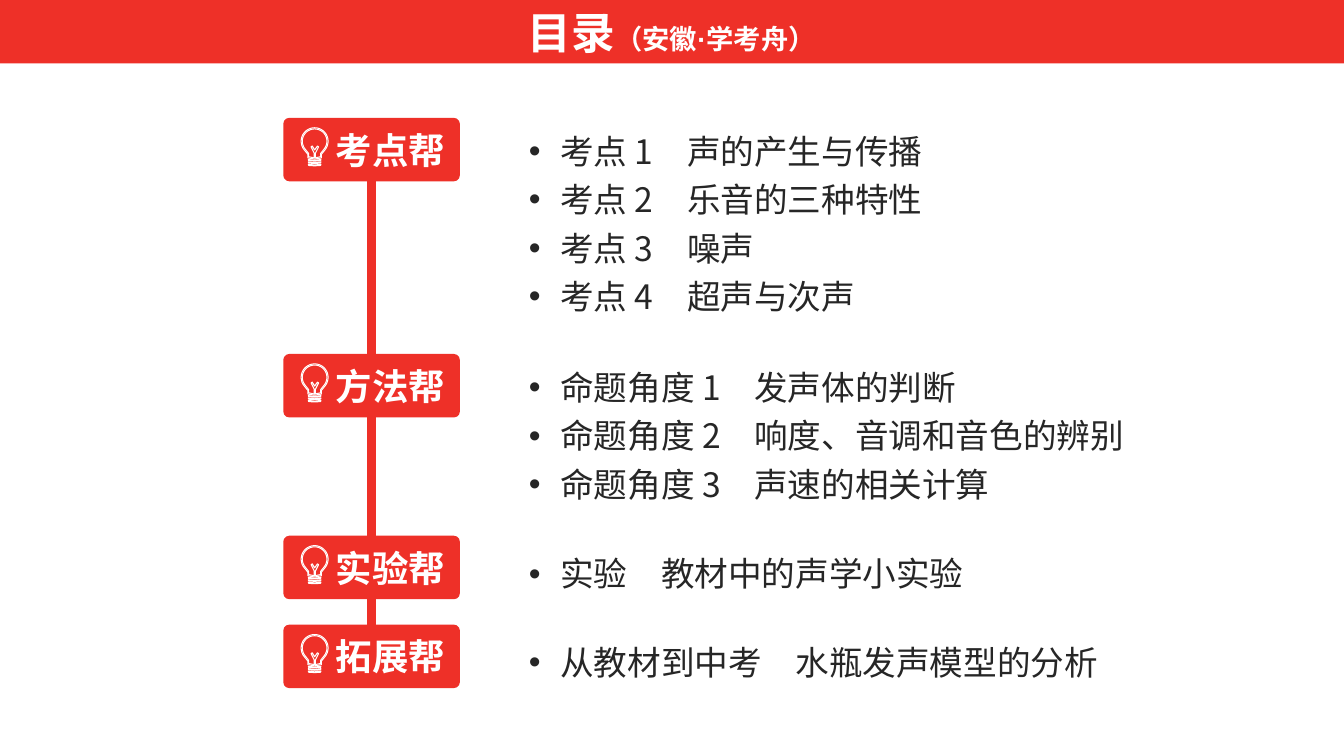
"""Build the contents slide on sound: four tags on a spine, each with its list."""
from math import cos, radians, sin

from lxml import etree
from pptx import Presentation, util as u
from pptx.dml.color import RGBColor
from pptx.enum import shapes, text
from pptx.oxml.ns import qn

RED, WHITE, INK = "EE3028", "FFFFFF", "262626"
HEAD, BODY = "Arial", "Noto Sans CJK SC"
TAG_X, TAG_W, TAG_H = 7.14, 4.45, 1.6
LIST_X, LIST_W, ROW, STEP = 13.08, 18.14, 1.37, 1.23
PARTS = [
    ("考点帮", 2.97, ["考点 1　声的产生与传播", "考点 2　乐音的三种特性",
                   "考点 3　噪声", "考点 4　超声与次声"]),
    ("方法帮", 8.92, ["命题角度 1　发声体的判断", "命题角度 2　响度、音调和音色的辨别",
                   "命题角度 3　声速的相关计算"]),
    ("实验帮", 13.5, ["实验　教材中的声学小实验"]),
    ("拓展帮", 15.74, ["从教材到中考　水瓶发声模型的分析"]),
]


def color(code):
    """Turn a hex string into a colour."""
    return RGBColor.from_string(code)


def paint(shape, fill, line=None):
    """Give a shape a flat fill and an optional thin line."""
    shape.shadow.inherit = False
    shape.fill.solid()
    shape.fill.fore_color.rgb = color(fill)
    if line:
        shape.line.color.rgb = color(line)
        shape.line.width = u.Pt(0.75)
    else:
        shape.line.fill.background()


def add_run(para, words, size, code, font, bold=False):
    """Add one formatted run to a paragraph."""
    run = para.add_run()
    run.text = words
    run.font.size, run.font.bold, run.font.name = u.Pt(size), bold, font
    run.font.color.rgb = color(code)
    east = etree.SubElement(run.font._element, qn("a:ea"))
    east.set("typeface", BODY)


def add_title(slide):
    """Turn the title placeholder into the red banner."""
    title = slide.shapes.title
    title.left, title.top = u.Cm(0), u.Cm(0)
    title.width, title.height = u.Cm(33.87), u.Cm(1.6)
    paint(title, RED)
    frame = title.text_frame
    frame.auto_size = text.MSO_AUTO_SIZE.NONE
    frame.vertical_anchor = text.MSO_ANCHOR.MIDDLE
    para = frame.paragraphs[0]
    para.alignment = text.PP_ALIGN.CENTER
    add_run(para, "目录", 31.2, WHITE, HEAD, True)
    add_run(para, "（安徽·学考舟）", 19.5, WHITE, HEAD, True)


def add_spine(slide):
    """Draw the thick line that runs behind the tags."""
    mid = u.Cm(TAG_X + TAG_W / 2)
    spine = slide.shapes.add_connector(
        shapes.MSO_CONNECTOR.STRAIGHT, mid, u.Cm(4.45), mid, u.Cm(16.18))
    spine.line.color.rgb = color(RED)
    spine.line.width = u.Pt(6)
    etree.SubElement(spine._element.spPr, qn("a:effectLst"))


def glass(radius, half, neck, foot):
    """Give the outline of a bulb: a round top, then a narrow neck."""
    turns = [radians(angle) for angle in range(140, 401, 10)]
    dome = [(0.34 + radius * cos(turn), 0.34 + radius * sin(turn)) for turn in turns]
    return dome + [(0.34 + half, neck), (0.34 + half, foot), (0.34, foot + 0.03),
                   (0.34 - half, foot), (0.34 - half, neck)]


def add_bulb(group, left, top):
    """Draw a light bulb from its glass, filament and base."""
    wire = [(0.33, 0.75), (0.33, 0.64), (0.25, 0.48), (0.28, 0.46), (0.34, 0.56),
            (0.41, 0.46), (0.44, 0.48), (0.36, 0.64), (0.36, 0.75)]
    rings = [[(0.18, y), (0.34, y + 0.02), (0.5, y), (0.49, y + 0.03),
              (0.34, y + 0.04), (0.19, y + 0.03)] for y in (0.8, 0.86, 0.92)]
    lines = [glass(0.34, 0.17, 0.67, 0.76), glass(0.31, 0.15, 0.65, 0.73), wire, *rings]
    build = None
    for line in lines:
        dots = [(u.Cm(x), u.Cm(y)) for x, y in line]
        if build is None:
            build = group.shapes.build_freeform(*dots[0])
        else:
            build.move_to(*dots[0])
        build.add_line_segments(dots[1:], close=True)
    paint(build.convert_to_shape(u.Cm(left), u.Cm(top)), RED, WHITE)


def add_tag(slide, words, top):
    """Add a rounded red tag with a bulb."""
    group = slide.shapes.add_group_shape()
    tag = group.shapes.add_shape(shapes.MSO_SHAPE.ROUNDED_RECTANGLE, u.Cm(TAG_X),
                                 u.Cm(top), u.Cm(TAG_W), u.Cm(TAG_H))
    tag.adjustments[0] = 0.095
    paint(tag, RED)
    frame = tag.text_frame
    frame.margin_right = u.Cm(0.33)
    frame.vertical_anchor = text.MSO_ANCHOR.MIDDLE
    para = frame.paragraphs[0]
    para.alignment = text.PP_ALIGN.RIGHT
    add_run(para, words, 26, WHITE, HEAD, True)
    add_bulb(group, TAG_X + 0.45, top + 0.25)


def add_list(slide, items, top):
    """Add a bulleted list, centred on its tag when it is one row."""
    high = ROW + STEP * (len(items) - 1)
    box = slide.shapes.add_textbox(u.Cm(LIST_X), u.Cm(top + max(0, (TAG_H - high) / 2)),
                                   u.Cm(LIST_W), u.Cm(high))
    frame = box.text_frame
    frame.word_wrap = True
    frame.auto_size = text.MSO_AUTO_SIZE.SHAPE_TO_FIT_TEXT
    for rank, item in enumerate(items):
        para = frame.add_paragraph() if rank else frame.paragraphs[0]
        para.line_spacing = 1.2
        props = para._p.get_or_add_pPr()
        props.set("marL", str(u.Cm(0.79)))
        props.set("indent", str(-u.Cm(0.79)))
        etree.SubElement(props, qn("a:buFont")).set("typeface", HEAD)
        etree.SubElement(props, qn("a:buChar")).set("char", "•")
        add_run(para, item, 24, INK, BODY)


def main():
    """Build the slide and save it."""
    deck = Presentation()
    deck.slide_width, deck.slide_height = u.Cm(33.87), u.Cm(19.05)
    slide = deck.slides.add_slide(deck.slide_layouts[5])
    add_title(slide)
    add_spine(slide)
    for words, top, items in PARTS:
        add_tag(slide, words, top)
        add_list(slide, items, top)
    deck.save("out.pptx")


if __name__ == "__main__":
    main()
